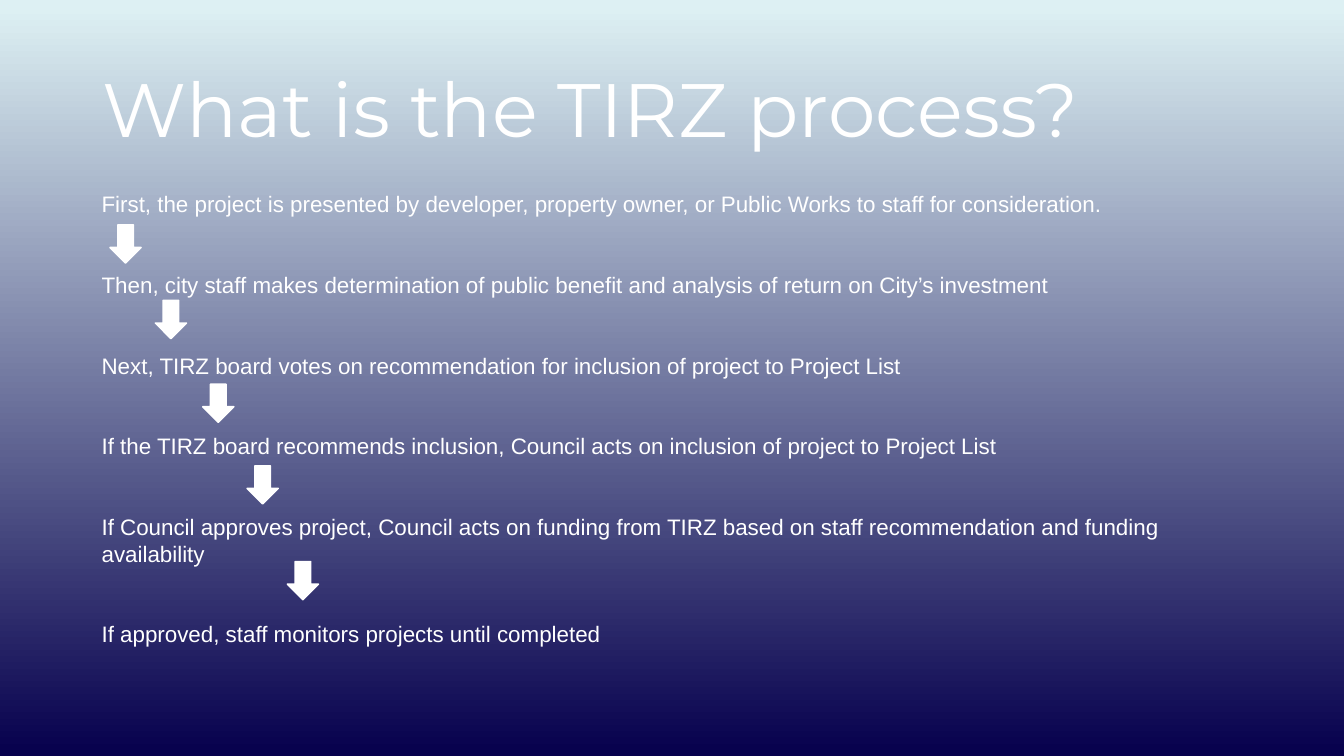
from dataclasses import dataclass
from typing import Optional

from pptx import Presentation
from pptx.dml.color import RGBColor
from pptx.enum.shapes import MSO_SHAPE as Preset
from pptx.enum.text import MSO_ANCHOR as Anchor
from pptx.slide import Slide
from pptx.text.text import TextFrame, _Paragraph as Paragraph
from pptx.util import Inches, Pt

WHITE = "FFFFFF"
NAVY = "06004D"
PALE_BLUE = "DDF0F3"
LINE_PITCH = 19.2  # points between the lines of the steps
ARROW_WIDTH, ARROW_HEIGHT = 0.31, 0.38


@dataclass(frozen=True)
class Arrow:
    left: float
    top: float


@dataclass(frozen=True)
class Step:
    wording: str
    arrow: Optional[Arrow] = None


STEPS = [
    Step("First, the project is presented by developer, property owner, "
         "or Public Works to staff for consideration.", Arrow(1.09, 2.23)),
    Step("Then, city staff makes determination of public benefit and "
         "analysis of return on City’s investment", Arrow(1.54, 2.98)),
    Step("Next, TIRZ board votes on recommendation for inclusion of "
         "project to Project List", Arrow(2.01, 3.81)),
    Step("If the TIRZ board recommends inclusion, Council acts on "
         "inclusion of project to Project List", Arrow(2.45, 4.62)),
    Step("If Council approves project, Council acts on funding from TIRZ "
         "based on staff recommendation and funding availability",
         Arrow(2.85, 5.57)),
    Step("If approved, staff monitors projects until completed"),
]


def color(value: str) -> RGBColor:
    return RGBColor.from_string(value)


def paint_background(slide: Slide) -> None:
    fill = slide.background.fill
    fill.gradient()
    fill.gradient_angle = 90
    for stop, (position, shade) in zip(fill.gradient_stops,
                                       [(0, NAVY), (0.99, PALE_BLUE)]):
        stop.position = position
        stop.color.rgb = color(shade)


def add_text_area(slide: Slide, left: float, top: float,
                  width: float, height: float) -> TextFrame:
    area = slide.shapes.add_textbox(Inches(left), Inches(top),
                                    Inches(width), Inches(height))
    area.text_frame.word_wrap = True
    return area.text_frame


def add_run(paragraph: Paragraph, wording: str, font: str, size: int) -> None:
    run = paragraph.add_run()
    run.text = wording
    run.font.name = font
    run.font.size = Pt(size)
    run.font.color.rgb = color(WHITE)


def add_arrow(slide: Slide, arrow: Arrow) -> None:
    shape = slide.shapes.add_shape(
        Preset.DOWN_ARROW, Inches(arrow.left), Inches(arrow.top),
        Inches(ARROW_WIDTH), Inches(ARROW_HEIGHT))
    shape.shadow.inherit = False
    shape.fill.solid()
    shape.fill.fore_color.rgb = color(WHITE)
    shape.line.color.rgb = color(WHITE)
    shape.line.width = Pt(1)


def main() -> None:
    deck = Presentation()
    deck.slide_width, deck.slide_height = Inches(13.33), Inches(7.5)
    slide = deck.slides.add_slide(deck.slide_layouts[6])
    paint_background(slide)

    # Title
    title = add_text_area(slide, 0.92, 0.4, 11.5, 1.45)
    title.vertical_anchor = Anchor.MIDDLE
    title.paragraphs[0].line_spacing = 0.9
    add_run(title.paragraphs[0], "What is the TIRZ process?", "Montserrat", 54)

    # Steps, two lines apart, with an arrow leading to the next
    process = add_text_area(slide, 0.91, 1.84, 11.53, 4.68)
    for index, step in enumerate(STEPS):
        paragraph = process.add_paragraph() if index else process.paragraphs[0]
        paragraph.line_spacing = Pt(LINE_PITCH)
        paragraph.space_after = Pt(2 * LINE_PITCH)
        add_run(paragraph, step.wording, "Arial", 16)
        if step.arrow:
            add_arrow(slide, step.arrow)

    deck.save("out.pptx")


if __name__ == "__main__":
    main()
